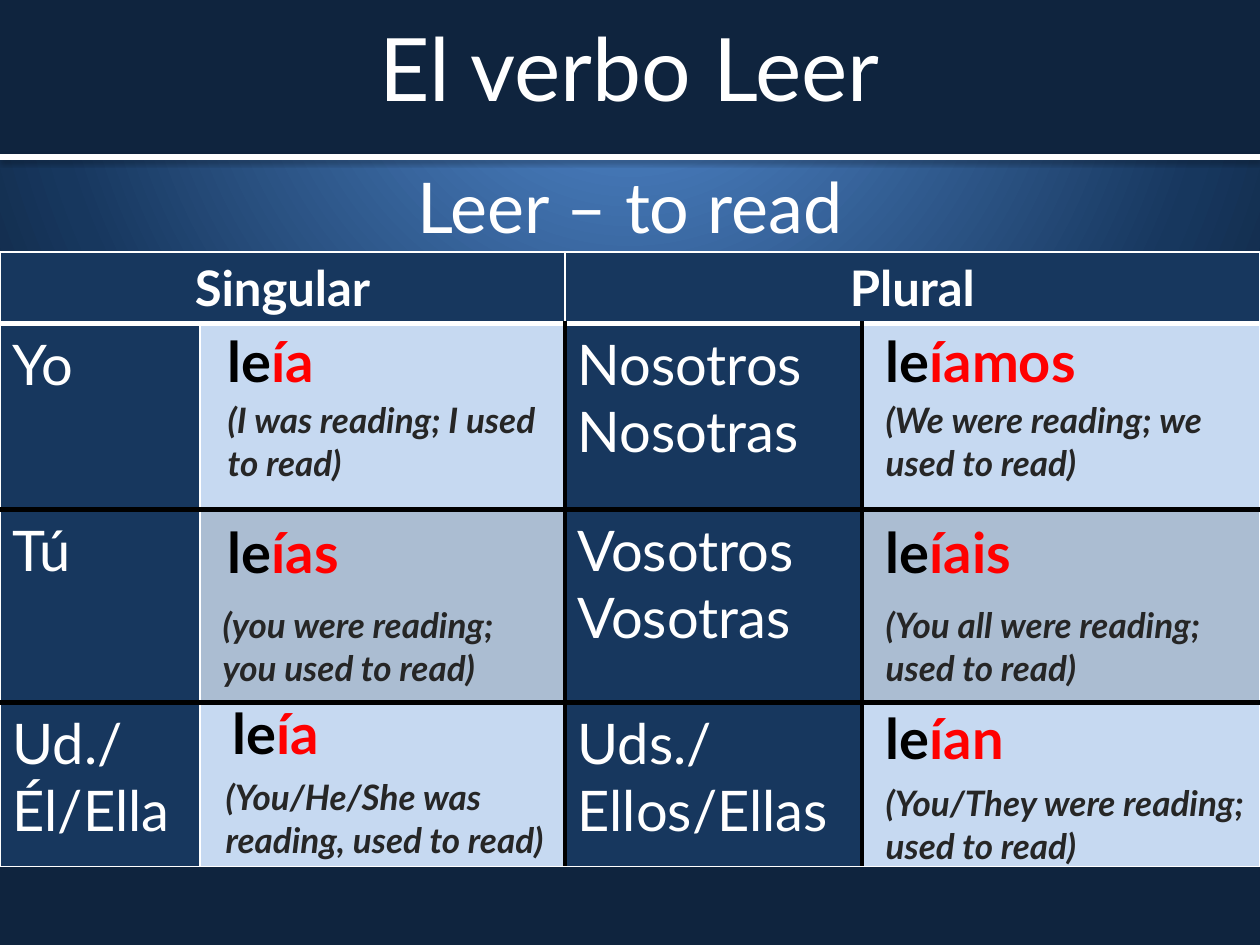
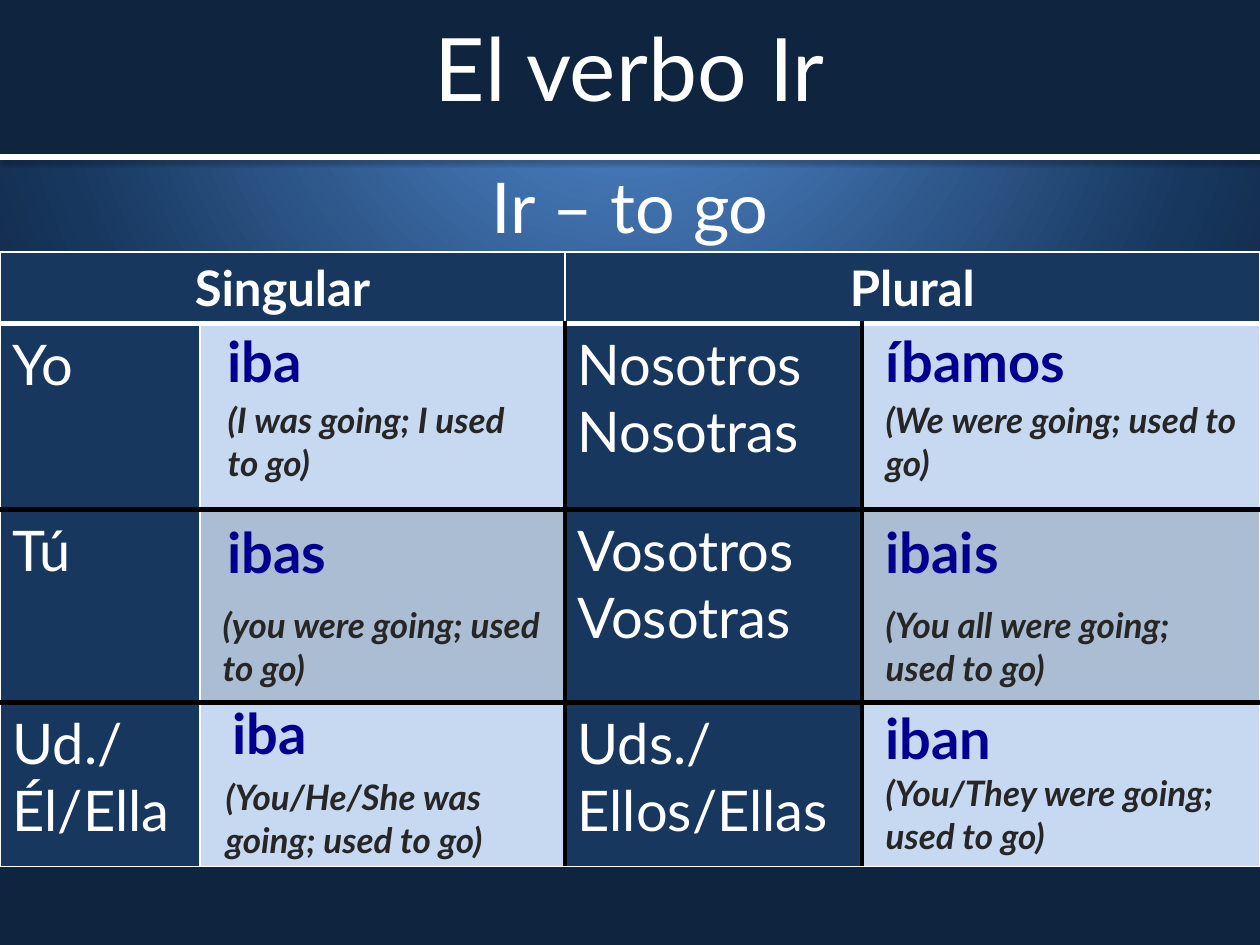
from dataclasses import dataclass

from pptx import Presentation
from pptx.dml.color import RGBColor
from pptx.enum.shapes import MSO_CONNECTOR as CONN, MSO_SHAPE as SHAPE
from pptx.enum.text import MSO_ANCHOR as ANCHOR, MSO_AUTO_SIZE as AUTOSIZE, PP_ALIGN as ALIGN
from pptx.oxml import parse_xml
from pptx.oxml.ns import nsdecls
from pptx.util import Emu, Pt

EMU_PER_PX = 914400 / 126
WIDTH, HEIGHT = 1260, 945
BAND_H = 157
FONT = "Lato"
NO_STYLE = "{2D5ABB26-0587-4C30-8999-92F81FD0307C}"
COLORS = {
    "white": "FFFFFF",
    "black": "000000",
    "sky": "558ED5",
    "blue": "17375E",
    "navy": "0F243E",
    "light": "C6D9F1",
    "shade": "ABBDD2",
    "red": "FF0000",
    "indigo": "000090",
    "gray": "262626",
}
GRADIENT = ((0, "sky"), (75, "blue"), (100, "navy"))
GRID_TOP = 252
GRID_COLS = (200, 365, 297, 398)
GRID_ROWS = (71, 186, 193, 164)
PRONOUNS = (
    ("Yo", "Nosotros\nNosotras"),
    ("Tú", "Vosotros\nVosotras"),
    ("Ud./Él/Ella", "Uds./Ellos/Ellas"),
)


@dataclass(frozen=True)
class Box:
    x: int
    y: int
    w: int
    h: int


@dataclass(frozen=True)
class Style:
    size: int
    color: str
    bold: bool = False
    italic: bool = False


@dataclass(frozen=True)
class Verb:
    name: str
    meaning: str
    stem: str
    endings: tuple[str, ...]
    ending_color: str
    glosses: tuple[str, ...]
    last_gloss_y: int


TITLE = Style(50, "white")
SUBTITLE = Style(40, "white")
HEADER = Style(28, "white", bold=True)
PRONOUN = Style(32, "white")
GLOSS = Style(20, "gray", bold=True, italic=True)

FORM_BOXES = (
    Box(215, 321, 310, 79), Box(215, 512, 295, 79), Box(220, 693, 310, 84),
    Box(873, 321, 355, 86), Box(873, 512, 318, 79), Box(873, 698, 302, 79),
)
GLOSS_BOXES = (
    Box(215, 393, 333, 97), Box(210, 598, 355, 97), Box(213, 770, 368, 97),
    Box(873, 393, 387, 97), Box(873, 598, 368, 97),
)

VERBS = (
    Verb(
        "Leer", "to read", "le", ("ía", "ías", "ía", "íamos", "íais", "ían"), "red",
        (
            "(I was reading; I used to read)",
            "(you were reading; you used to read)",
            "(You/He/She was reading, used to read)",
            "(We were reading; we used to read)",
            "(You all were reading; used to read)",
            "(You/They were reading; used to read)",
        ),
        776,
    ),
    Verb(
        "Ir", "to go", "", ("iba", "ibas", "iba", "íbamos", "ibais", "iban"), "indigo",
        (
            "(I was going; I used to go)",
            "(you were going; used to go)",
            "(You/He/She was going; used to go)",
            "(We were going; used to go)",
            "(You all were going; used to go)",
            "(You/They were going; used to go)",
        ),
        766,
    ),
)


def px(n: int) -> Emu:
    return Emu(round(n * EMU_PER_PX))


def rgb(name: str) -> RGBColor:
    return RGBColor.from_string(COLORS[name])


def place(box: Box) -> tuple[Emu, ...]:
    return px(box.x), px(box.y), px(box.w), px(box.h)


def format_run(r, style: Style) -> None:
    r.font.name = FONT
    r.font.size = Pt(style.size)
    r.font.bold = style.bold
    r.font.italic = style.italic
    r.font.color.rgb = rgb(style.color)


def write(tf, text: str, style: Style, align=ALIGN.LEFT) -> None:
    tf.text = text
    for p in tf.paragraphs:
        p.alignment = align
        for r in p.runs:
            format_run(r, style)


def add_background(s) -> None:
    stops = "".join(
        f'<a:gs pos="{pos * 1000}"><a:srgbClr val="{COLORS[color]}"/></a:gs>'
        for pos, color in GRADIENT
    )
    s.element.cSld.insert(0, parse_xml(
        f'<p:bg {nsdecls("p", "a")}><p:bgPr><a:gradFill rotWithShape="1">'
        f'<a:gsLst>{stops}</a:gsLst><a:path path="circle">'
        '<a:fillToRect l="50000" t="-80000" r="50000" b="180000"/></a:path>'
        '</a:gradFill><a:effectLst/></p:bgPr></p:bg>'
    ))


def add_heading(s, verb: Verb) -> None:
    band = s.shapes.add_shape(SHAPE.RECTANGLE, *place(Box(0, 0, WIDTH, BAND_H)))
    band.shadow.inherit = False
    band.fill.solid()
    band.fill.fore_color.rgb = rgb("navy")
    band.line.fill.background()

    sub = s.shapes.add_textbox(*place(Box(0, BAND_H, WIDTH, 655)))
    sub.text_frame.word_wrap = True
    write(sub.text_frame, f"{verb.name} – {verb.meaning}", SUBTITLE, ALIGN.CENTER)

    rule = s.shapes.add_connector(CONN.STRAIGHT, 0, px(BAND_H), px(WIDTH), px(BAND_H))
    rule.line.color.rgb = rgb("white")
    rule.line.width = Pt(3)
    rule.element.spPr.append(parse_xml(
        f'<a:effectLst {nsdecls("a")}><a:outerShdw blurRad="{Pt(3.1)}" dist="{Pt(1.6)}" '
        f'dir="5400000" rotWithShape="0"><a:srgbClr val="{COLORS["black"]}">'
        '<a:alpha val="38000"/></a:srgbClr></a:outerShdw></a:effectLst>'
    ))

    title = s.shapes.title
    title.left, title.top, title.width, title.height = place(Box(0, 0, WIDTH, 134))
    tf = title.text_frame
    tf.word_wrap = True
    tf.auto_size = AUTOSIZE.NONE
    tf.vertical_anchor = ANCHOR.MIDDLE
    write(tf, f"El verbo {verb.name}", TITLE, ALIGN.CENTER)
    s.shapes._spTree.append(title.element)


def add_plain_table(s, rows: int, cols: int, box: Box):
    frame = s.shapes.add_table(rows, cols, *place(box))
    frame.element.xpath(".//a:tableStyleId")[0].text = NO_STYLE
    frame.table.first_row = False
    frame.table.horz_banding = False
    return frame.table


def set_borders(cell, row: int, col: int) -> None:
    thin, white, black = ("white", 1), ("white", 3), ("black", 3)
    sides = {
        "L": black if row and col >= 2 else thin,
        "R": black if row and col in (1, 2) else thin,
        "T": (thin, white, black, black)[row],
        "B": (white, black, black, thin)[row],
    }
    tc_pr = cell._tc.get_or_add_tcPr()
    for i, (side, (color, width)) in enumerate(sides.items()):
        tc_pr.insert(i, parse_xml(
            f'<a:ln{side} {nsdecls("a")} w="{Pt(width)}"><a:solidFill>'
            f'<a:srgbClr val="{COLORS[color]}"/></a:solidFill></a:ln{side}>'
        ))


def add_grid(s) -> None:
    box = Box(0, GRID_TOP, WIDTH, sum(GRID_ROWS))
    table = add_plain_table(s, len(GRID_ROWS), len(GRID_COLS), box)
    for column, w in zip(table.columns, GRID_COLS):
        column.width = px(w)
    for row, h in enumerate(GRID_ROWS):
        table.rows[row].height = px(h)
        for col in range(len(GRID_COLS)):
            cell = table.cell(row, col)
            set_borders(cell, row, col)
            cell.fill.solid()
            form_fill = "shade" if row == 2 else "light"
            cell.fill.fore_color.rgb = rgb(form_fill if row and col % 2 else "blue")
    for col, label in ((0, "Singular"), (2, "Plural")):
        cell = table.cell(0, col)
        cell.merge(table.cell(0, col + 1))
        write(cell.text_frame, label, HEADER, ALIGN.CENTER)
    for row, pair in enumerate(PRONOUNS, 1):
        for col, pronoun in zip((0, 2), pair):
            write(table.cell(row, col).text_frame, pronoun, PRONOUN)


def add_form(s, box: Box, verb: Verb, ending: str) -> None:
    p = add_plain_table(s, 1, 1, box).cell(0, 0).text_frame.paragraphs[0]
    for text, color in ((verb.stem, "black"), (ending, verb.ending_color)):
        if text:
            r = p.add_run()
            r.text = text
            format_run(r, Style(32, color, bold=True))


def add_verb_slide(prs, verb: Verb) -> None:
    s = prs.slides.add_slide(prs.slide_layouts[5])
    add_background(s)
    add_heading(s, verb)
    add_grid(s)
    for box, ending in zip(FORM_BOXES, verb.endings):
        add_form(s, box, verb, ending)
    gloss_boxes = (*GLOSS_BOXES, Box(873, verb.last_gloss_y, 387, 97))
    for box, gloss in zip(gloss_boxes, verb.glosses):
        write(add_plain_table(s, 1, 1, box).cell(0, 0).text_frame, gloss, GLOSS)


def main() -> None:
    prs = Presentation()
    prs.slide_width, prs.slide_height = px(WIDTH), px(HEIGHT)
    for verb in VERBS:
        add_verb_slide(prs, verb)
    prs.save("out.pptx")


if __name__ == "__main__":
    main()
